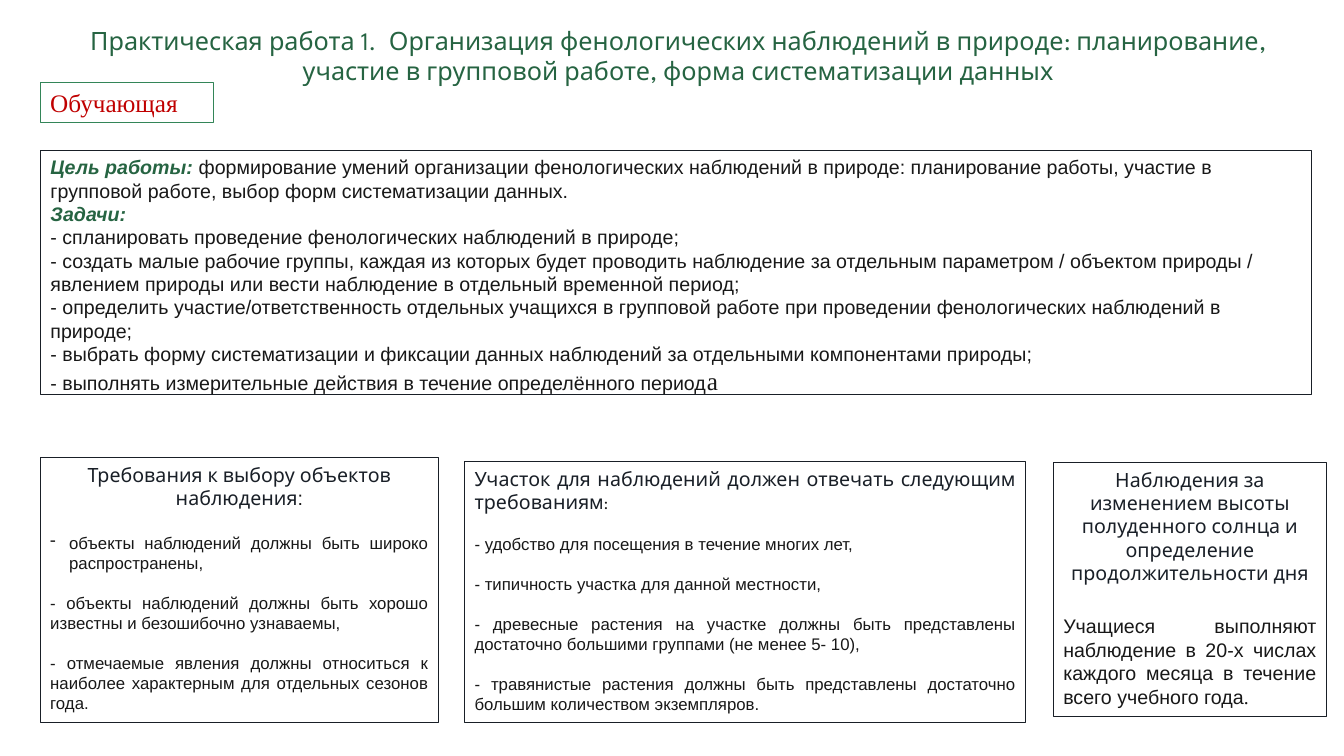
import pptx
import pptx.dml.color
import pptx.enum.shapes
import pptx.enum.text
import pptx.util
from lxml import etree

Pt = pptx.util.Pt
Align = pptx.enum.text.PP_ALIGN

GREEN = pptx.dml.color.RGBColor(0x26, 0x64, 0x42)
BORDER_GREEN = pptx.dml.color.RGBColor(0x33, 0x85, 0x58)
RED = pptx.dml.color.RGBColor(0xC0, 0x00, 0x00)
DARK = pptx.dml.color.RGBColor(0x19, 0x1F, 0x27)
TEXT = pptx.dml.color.RGBColor(0x18, 0x18, 0x18)

HEAD_FONT = "League Spartan"
BODY_FONT = "Arial"
SERIF_FONT = "Times New Roman"


class Composer:
    """Holds the style and the current slide."""

    line_factor = 1.19
    border_width = 0.75

    def __init__(self, deck):
        self.page = deck.slides.add_slide(deck.slide_layouts[1])

    def place(self, box, left, top, width, height):
        box.left, box.top = Pt(left), Pt(top)
        box.width, box.height = Pt(width), Pt(height)
        frame = box.text_frame
        frame.word_wrap = True
        frame.auto_size = pptx.enum.text.MSO_AUTO_SIZE.SHAPE_TO_FIT_TEXT
        frame.vertical_anchor = pptx.enum.text.MSO_ANCHOR.TOP

    def outline(self, box, color):
        box.fill.background()
        box.line.color.rgb = color
        box.line.width = Pt(self.border_width)

    def title(self, *area):
        box = self.page.shapes.title
        self.place(box, *area)
        return box

    def body(self, *area):
        box = self.page.placeholders[1]
        self.place(box, *area)
        self.outline(box, DARK)
        return box

    def panel(self, *area, color=DARK):
        kind = pptx.enum.shapes.MSO_SHAPE.RECTANGLE
        box = self.page.shapes.add_shape(kind, *map(Pt, area))
        box.shadow.inherit = False
        self.place(box, *area)
        self.outline(box, color)
        return box

    def paragraph(self, box, *spans, size=14, align=Align.LEFT, gap=0, hanging=0, bullet=None):
        """Add a paragraph; gap is the text size of the empty line above it."""
        frame = box.text_frame
        para = frame.paragraphs[0]
        if para.runs:
            para = frame.add_paragraph()
        para.alignment = align
        para.line_spacing = Pt(round(size * self.line_factor, 1))
        para.space_before = Pt(round(gap * self.line_factor, 1))
        para.space_after = Pt(0)
        properties = para._p.get_or_add_pPr()
        properties.set("marL", str(Pt(hanging)))
        properties.set("indent", str(-Pt(hanging)))
        namespace = pptx.oxml.ns.qn("a:buNone" if bullet is None else "a:buChar")
        mark = etree.SubElement(properties, namespace)
        if bullet:
            mark.set("char", bullet)
        for words, font, points, color, strong in spans:
            span = para.add_run()
            span.text = words
            span.font.name = font
            span.font.size = Pt(points)
            span.font.color.rgb = color
            span.font.bold = span.font.italic = strong


def heading(words, size=14, color=DARK):
    return words, HEAD_FONT, size, color, False


def plain(words, size=14):
    return words, BODY_FONT, size, TEXT, False


def label(words):
    return words, BODY_FONT, 14, GREEN, True


def main():
    deck = pptx.Presentation()
    deck.slide_width, deck.slide_height = Pt(960), Pt(540)
    composer = Composer(deck)
    add = composer.paragraph
    left = 28.8

    # Title and tag
    title = composer.title(left, 14.4, 911.5, 51.1)
    add(title, heading("Практическая работа 1.  Организация фенологических наблюдений в природе: "
                       "планирование, участие в групповой работе, форма систематизации данных",
                       18, GREEN), size=18, align=Align.CENTER)
    tag = composer.panel(left, 59, 123.8, 28.8, color=BORDER_GREEN)
    add(tag, ("Обучающая", SERIF_FONT, 18, RED, False), size=18)

    # Goal and tasks
    goals = composer.body(left, 107.3, 907.9, 181.4)
    add(goals, label("Цель работы: "),
        plain("формирование умений организации фенологических наблюдений в природе: планирование "
              "работы, участие в групповой работе, выбор форм систематизации данных."))
    add(goals, label("Задачи:"))
    for task in (
        "- спланировать проведение фенологических наблюдений в природе;",
        "- создать малые рабочие группы, каждая из которых будет проводить наблюдение за отдельным "
        "параметром / объектом природы / явлением природы или вести наблюдение в отдельный "
        "временной период;",
        "- определить участие/ответственность отдельных учащихся в групповой работе при проведении "
        "фенологических наблюдений в природе;",
        "- выбрать форму систематизации и фиксации данных наблюдений за отдельными компонентами "
        "природы;",
    ):
        add(goals, plain(task))
    add(goals, plain("- выполнять измерительные действия в течение определённого период"),
        ("а", SERIF_FONT, 18, TEXT, False), size=18)

    # Choice of objects
    objects = composer.panel(left, 326.9, 284.4, 189.4)
    add(objects, heading("Требования к выбору объектов наблюдения"), plain(":"),
        align=Align.CENTER)
    add(objects, plain("объекты наблюдений должны быть широко распространены,", 12),
        size=12, align=Align.JUSTIFY, gap=14, hanging=13.5, bullet="-")
    for demand in (
        "- объекты наблюдений должны быть хорошо известны и безошибочно узнаваемы,",
        "- отмечаемые явления должны относиться к наиболее характерным для отдельных сезонов года.",
    ):
        add(objects, plain(demand, 12), size=12, align=Align.JUSTIFY, gap=12)

    # Observation site
    site = composer.panel(331.9, 329.8, 401, 186.5)
    add(site, heading("Участок для наблюдений должен отвечать следующим требованиям"),
        heading(":", 12, TEXT), align=Align.JUSTIFY)
    for demand in (
        "- удобство для посещения в течение многих лет,",
        "- типичность участка для данной местности,",
        "- древесные растения на участке должны быть представлены достаточно большими группами "
        "(не менее 5- 10),",
        "- травянистые растения должны быть представлены достаточно большим количеством "
        "экземпляров.",
    ):
        add(site, plain(demand, 12), size=12, align=Align.JUSTIFY, gap=12)

    # Sun height and day length
    sun = composer.panel(752.4, 330.5, 195.1, 181.4)
    add(sun, heading("Наблюдения за изменением высоты полуденного солнца и определение "
                     "продолжительности дня"), align=Align.CENTER)
    add(sun, plain("Учащиеся выполняют наблюдение в 20-х числах каждого месяца в течение всего "
                   "учебного года"), (".", SERIF_FONT, 14, TEXT, False),
        align=Align.JUSTIFY, gap=18)

    deck.save("out.pptx")


if __name__ == "__main__":
    main()
